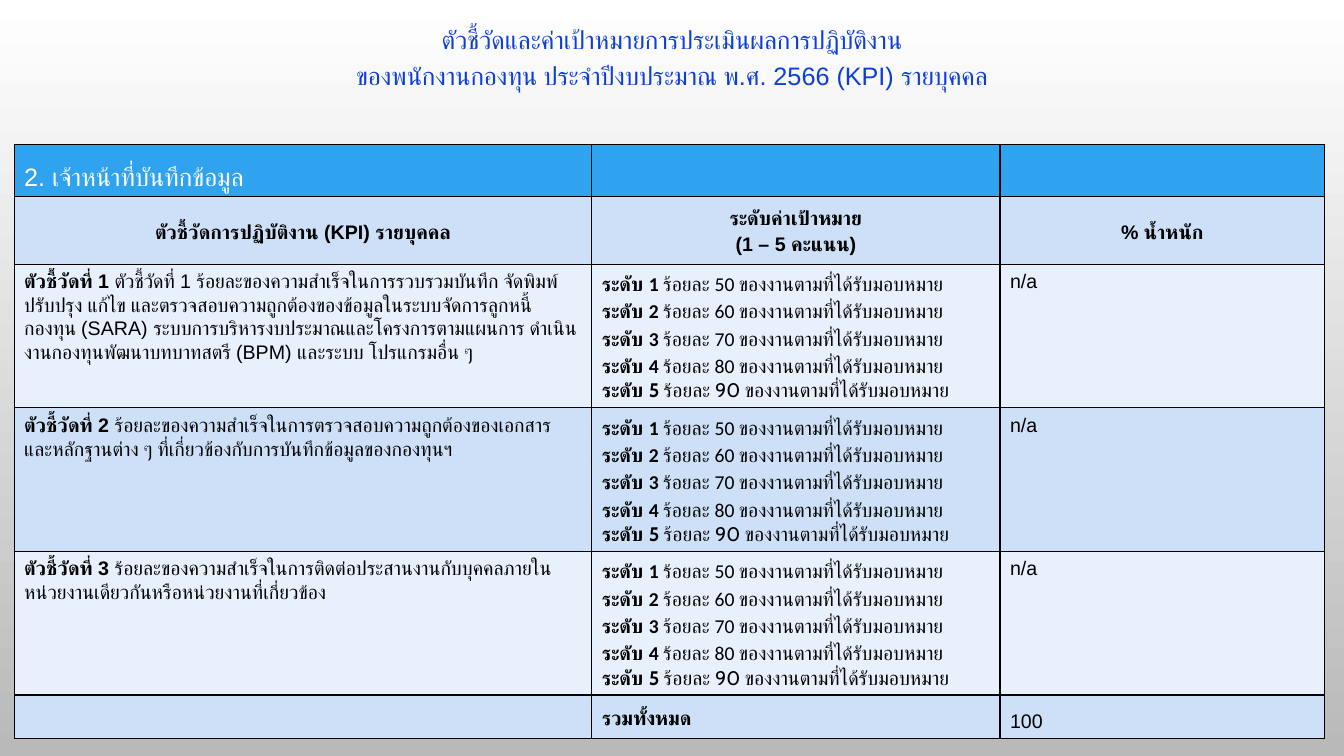
from lxml import etree
from pptx import Presentation
from pptx.dml.color import RGBColor
from pptx.enum.text import MSO_ANCHOR as ANCHOR, MSO_AUTO_SIZE as AUTO, PP_ALIGN as ALIGN
from pptx.oxml.ns import qn
from pptx.util import Pt

# Content
TITLE = ["ตัวชี้วัดและค่าเป้าหมายการประเมินผลการปฏิบัติงาน",
         "ของพนักงานกองทุน ประจำปีงบประมาณ พ.ศ. 2566 (KPI) รายบุคคล"]
POSITION = "2. เจ้าหน้าที่บันทึกข้อมูล"
HEADERS = [["ตัวชี้วัดการปฏิบัติงาน (KPI) รายบุคคล"],
           ["ระดับค่าเป้าหมาย", "(1 – 5 คะแนน)"],
           ["% น้ำหนัก"]]
INDICATORS = [
    "ตัวชี้วัดที่ 1 ร้อยละของความสำเร็จในการรวบรวมบันทึก จัดพิมพ์ ปรับปรุง แก้ไข "
    "และตรวจสอบความถูกต้องของข้อมูลในระบบจัดการลูกหนี้กองทุน (SARA) "
    "ระบบการบริหารงบประมาณและโครงการตามแผนการ "
    "ดำเนินงานกองทุนพัฒนาบทบาทสตรี (BPM) และระบบ โปรแกรมอื่น ๆ",
    "ร้อยละของความสำเร็จในการตรวจสอบความถูกต้องของเอกสาร "
    "และหลักฐานต่าง ๆ ที่เกี่ยวข้องกับการบันทึกข้อมูลของกองทุนฯ",
    "ร้อยละของความสำเร็จในการติดต่อประสานงานกับบุคคลภายใน"
    "หน่วยงานเดียวกันหรือหน่วยงานที่เกี่ยวข้อง",
]
LEVELS = [50, 60, 70, 80, 90]
WEIGHT = "n/a"
TOTAL = ("รวมทั้งหมด", "100")

# Layout and colours
COL_WIDTHS = [412.6, 291.6, 231.8]
ROW_HEIGHTS = [31.7, 48.2, 90, 90, 90, 31]
BLUE, HEAD, DARK, LIGHT = "0E3EDA", "2FA3EE", "CDE0F8", "E8F0FC"
ROW_FILLS = [HEAD, DARK, LIGHT, DARK, LIGHT, DARK]
BODY_SPACING = Pt(16.8)


def rgb(value):
    return RGBColor.from_string(value)


def write(tf, paragraphs, size=14, font="Arial", color="000000", bold=False,
          align=ALIGN.LEFT, spacing=1.0):
    """Each paragraph is a string or a list of (text, bold) runs."""
    for i, runs in enumerate(paragraphs):
        p = tf.paragraphs[0] if i == 0 else tf.add_paragraph()
        p.alignment, p.line_spacing = align, spacing
        p.space_before = p.space_after = Pt(0)
        for text, strong in [(runs, bold)] if isinstance(runs, str) else runs:
            r = p.add_run()
            r.text = text
            r.font.size, r.font.name, r.font.bold = Pt(size), font, strong
            r.font.color.rgb = rgb(color)


def add_borders(cell):
    tc_pr = cell._tc.get_or_add_tcPr()
    for i, side in enumerate(("a:lnL", "a:lnR", "a:lnT", "a:lnB")):
        ln = etree.Element(qn(side), w=str(Pt(1)))
        fill = etree.SubElement(ln, qn("a:solidFill"))
        etree.SubElement(fill, qn("a:srgbClr"), val="000000")
        tc_pr.insert(i, ln)


prs = Presentation()
prs.slide_width, prs.slide_height = Pt(960), Pt(540)
s = prs.slides.add_slide(prs.slide_layouts[5])

# Background
bg = s.background.fill
bg.gradient()
bg.gradient_angle = 270
for stop, (position, color) in zip(bg.gradient_stops, [(0, "FFFFFF"), (1, "B9B9B9")]):
    stop.position, stop.color.rgb = position, rgb(color)

# Title
title = s.shapes.title
title.left, title.top, title.width, title.height = Pt(48), Pt(9.4), Pt(864), Pt(88.6)
tf = title.text_frame
tf.word_wrap, tf.auto_size, tf.vertical_anchor = True, AUTO.NONE, ANCHOR.TOP
write(tf, TITLE, size=18, color=BLUE, align=ALIGN.CENTER, spacing=1.2)

# Table frame
table = s.shapes.add_table(len(ROW_HEIGHTS), len(COL_WIDTHS), Pt(10.1), Pt(103),
                           Pt(sum(COL_WIDTHS)), Pt(sum(ROW_HEIGHTS))).table
table.first_row = table.horz_banding = False
for col, width in zip(table.columns, COL_WIDTHS):
    col.width = Pt(width)
for r, (height, color) in enumerate(zip(ROW_HEIGHTS, ROW_FILLS)):
    table.rows[r].height = Pt(height)
    for cell in table.rows[r].cells:
        cell.fill.solid()
        cell.fill.fore_color.rgb = rgb(color)
        add_borders(cell)

# Heading rows
cell = table.cell(0, 0)
cell.vertical_anchor = ANCHOR.MIDDLE
write(cell.text_frame, [POSITION], size=18, color="FFFFFF", spacing=1.5)
for c, lines in enumerate(HEADERS):
    cell = table.cell(1, c)
    cell.vertical_anchor = ANCHOR.MIDDLE
    write(cell.text_frame, lines, bold=True, align=ALIGN.CENTER, spacing=1.2)

# Indicator rows
level_lines = [[(f"ระดับ {n} ", True), (f"ร้อยละ {percent} ของงานตามที่ได้รับมอบหมาย", False)]
               for n, percent in enumerate(LEVELS, 1)]
for n, text in enumerate(INDICATORS, 1):
    name, target, weight = (cell.text_frame for cell in table.rows[n + 1].cells)
    write(name, [[(f"ตัวชี้วัดที่ {n} ", True), (text, False)]], spacing=BODY_SPACING)
    write(target, level_lines[:-1], font="Calibri", spacing=1.15)
    target.add_paragraph()
    last = target.paragraphs[-1]
    for text_part, strong in level_lines[-1]:
        run = last.add_run()
        run.text = text_part
        run.font.size, run.font.name, run.font.bold = Pt(14), "Cabin", strong
        run.font.color.rgb = rgb("000000")
    write(weight, [WEIGHT], spacing=BODY_SPACING)

# Total row
for c, (text, strong) in enumerate(zip(TOTAL, (True, False)), 1):
    write(table.cell(5, c).text_frame, [text], bold=strong, spacing=1.5)

prs.save("out.pptx")
